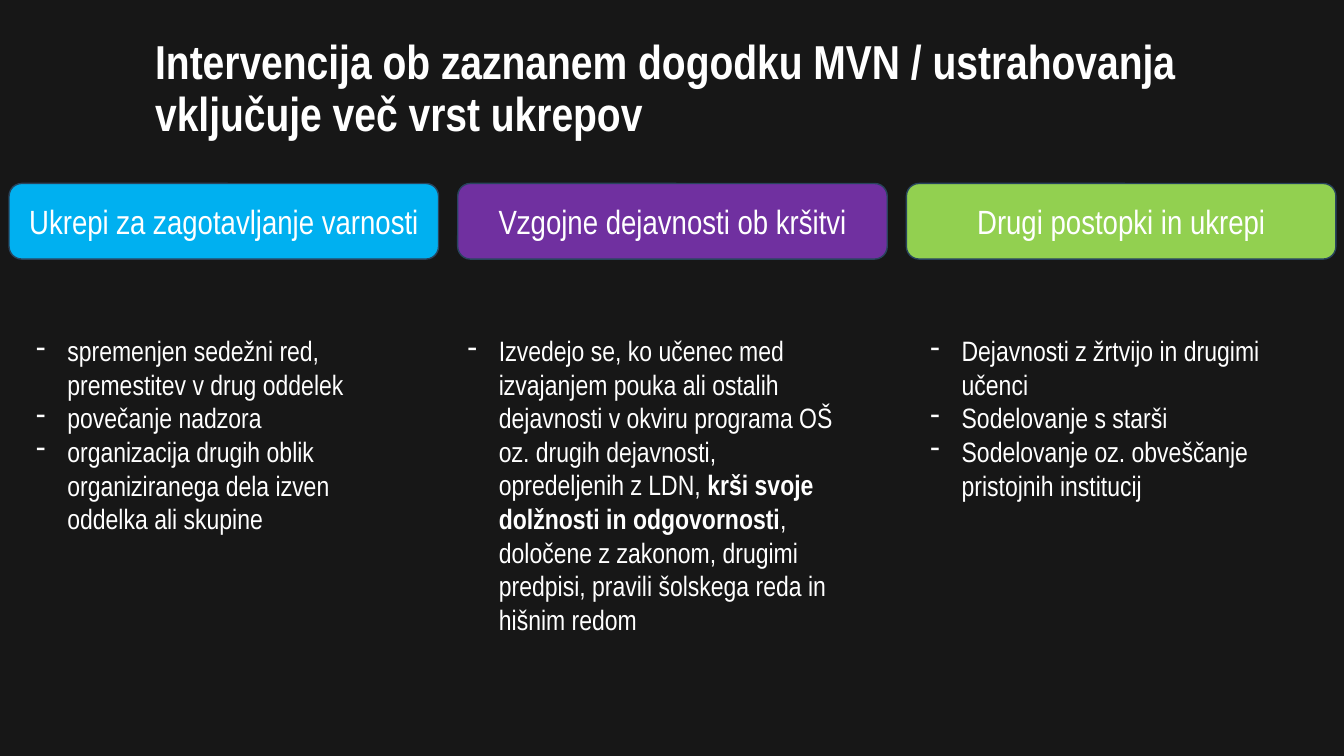
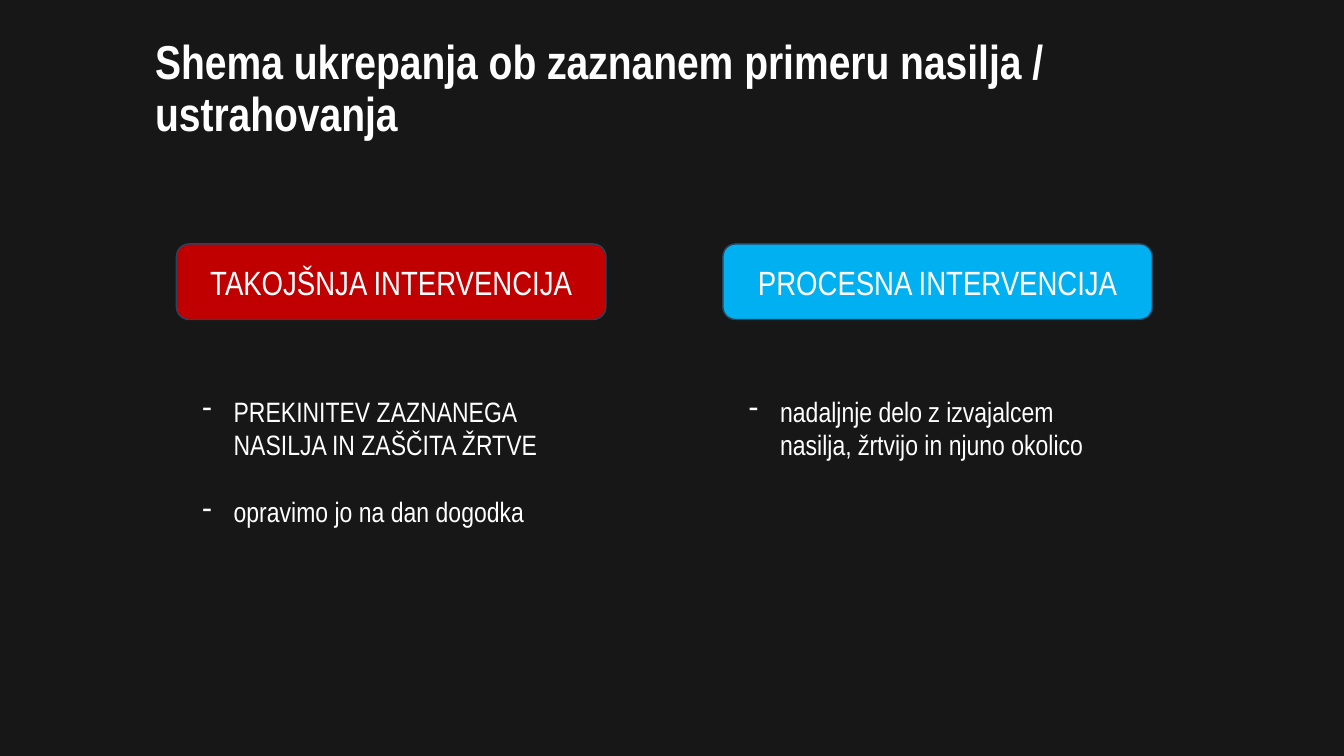
from lxml import etree
from pptx import Presentation
from pptx import util as u
from pptx.dml.color import RGBColor
from pptx.enum import shapes, text
from pptx.oxml import ns

COLOURS = {
    "background": "171717",
    "white": "FFFFFF",
    "outline": "28445D",
    "blue": "00B0F0",
    "purple": "7030A0",
    "green": "92D050",
    "red": "C00000",
}
FONT = "Arial Narrow"
HEADER_WIDTH, HEADER_HEIGHT = 4.26, 0.75
LIST_WIDTH, LIST_DROP, LIST_INDENT = 3.94, 1.44, 0.31


class SlideWriter:
    """Holds the shared style and the current slide, and draws each kind of element."""

    def __init__(self):
        self.deck = Presentation()
        self.deck.slide_width = u.Inches(13.33)
        self.deck.slide_height = u.Inches(7.5)
        self.page = None

    def colour(self, name):
        return RGBColor.from_string(COLOURS[name])

    def add_span(self, para, words, size, bold=False):
        span = para.add_run()
        span.text = words
        span.font.name = FONT
        span.font.size = u.Pt(size)
        span.font.bold = bold
        span.font.color.rgb = self.colour("white")

    def add_box(self, left, top, width, height):
        box = self.page.shapes.add_textbox(*map(u.Inches, (left, top, width, height)))
        box.text_frame.word_wrap = True
        return box

    def add_page(self, title):
        self.page = self.deck.slides.add_slide(self.deck.slide_layouts[6])
        fill = self.page.background.fill
        fill.solid()
        fill.fore_color.rgb = self.colour("background")
        frame = self.add_box(1.44, 0.17, 10.98, 1.45).text_frame
        frame.vertical_anchor = text.MSO_ANCHOR.MIDDLE
        para = frame.paragraphs[0]
        para.line_spacing = 0.9
        self.add_span(para, title, 34, bold=True)

    def add_header(self, left, top, words, colour):
        box = self.page.shapes.add_shape(
            shapes.MSO_SHAPE.ROUNDED_RECTANGLE,
            *map(u.Inches, (left, top, HEADER_WIDTH, HEADER_HEIGHT)))
        box.shadow.inherit = False
        box.fill.solid()
        box.fill.fore_color.rgb = self.colour(colour)
        box.line.color.rgb = self.colour("outline")
        box.line.width = u.Pt(1)
        box.text_frame.word_wrap = True
        box.text_frame.vertical_anchor = text.MSO_ANCHOR.MIDDLE
        para = box.text_frame.paragraphs[0]
        para.alignment = text.PP_ALIGN.CENTER
        self.add_span(para, words, 24)

    def add_dash(self, para):
        properties = para._p.get_or_add_pPr()
        indent = u.Inches(LIST_INDENT)
        properties.set("marL", str(indent))
        properties.set("indent", str(-indent))
        etree.SubElement(properties, ns.qn("a:buFontTx"))
        etree.SubElement(properties, ns.qn("a:buChar")).set("char", "-")

    def add_list(self, left, top, height, items, gap):
        frame = self.add_box(left, top, LIST_WIDTH, height).text_frame
        frame.auto_size = text.MSO_AUTO_SIZE.SHAPE_TO_FIT_TEXT
        for index, item in enumerate(items):
            para = frame.add_paragraph() if index else frame.paragraphs[0]
            self.add_dash(para)
            if index and gap:
                para.space_before = u.Pt(gap)
            for words, bold in item:
                self.add_span(para, words, 20, bold)

    def add_columns(self, left, pitch, top, columns, gap=0):
        for index, (header, colour, list_left, height, items) in enumerate(columns):
            self.add_header(left + index * pitch, top, header, colour)
            self.add_list(list_left, top + LIST_DROP, height, items, gap)


def plain(*items):
    return [[(words, False)] for words in items]


def main():
    writer = SlideWriter()

    writer.add_page("Intervencija ob zaznanem dogodku MVN / ustrahovanja vključuje več vrst ukrepov")
    writer.add_columns(0.09, 4.45, 1.82, [
        ("Ukrepi za zagotavljanje varnosti", "blue", 0.26, 2.12, plain(
            "spremenjen sedežni red, premestitev v drug oddelek",
            "povečanje nadzora",
            "organizacija drugih oblik organiziranega dela izven oddelka ali skupine")),
        ("Vzgojne dejavnosti ob kršitvi", "purple", 4.54, 3.13, [[
            ("Izvedejo se, ko učenec med izvajanjem pouka ali ostalih dejavnosti v okviru "
             "programa OŠ oz. drugih dejavnosti, opredeljenih z LDN, ", False),
            ("krši svoje dolžnosti in odgovornosti", True),
            (", določene z zakonom, drugimi predpisi, pravili šolskega reda in hišnim redom",
             False)]]),
        ("Drugi postopki in ukrepi", "green", 9.13, 2.12, plain(
            "Dejavnosti z žrtvijo in drugimi učenci",
            "Sodelovanje s starši",
            "Sodelovanje oz. obveščanje pristojnih institucij")),
    ])

    writer.add_page("Shema ukrepanja ob zaznanem primeru nasilja / ustrahovanja")
    writer.add_columns(1.75, 5.42, 2.42, [
        ("TAKOJŠNJA INTERVENCIJA", "red", 1.91, 1.45, plain(
            "PREKINITEV ZAZNANEGA NASILJA IN ZAŠČITA ŽRTVE",
            "opravimo jo na dan dogodka")),
        ("PROCESNA INTERVENCIJA", "blue", 7.33, 0.77, plain(
            "nadaljnje delo z izvajalcem nasilja, žrtvijo in njuno okolico")),
    ], gap=24)

    writer.deck.save("out.pptx")


if __name__ == "__main__":
    main()
